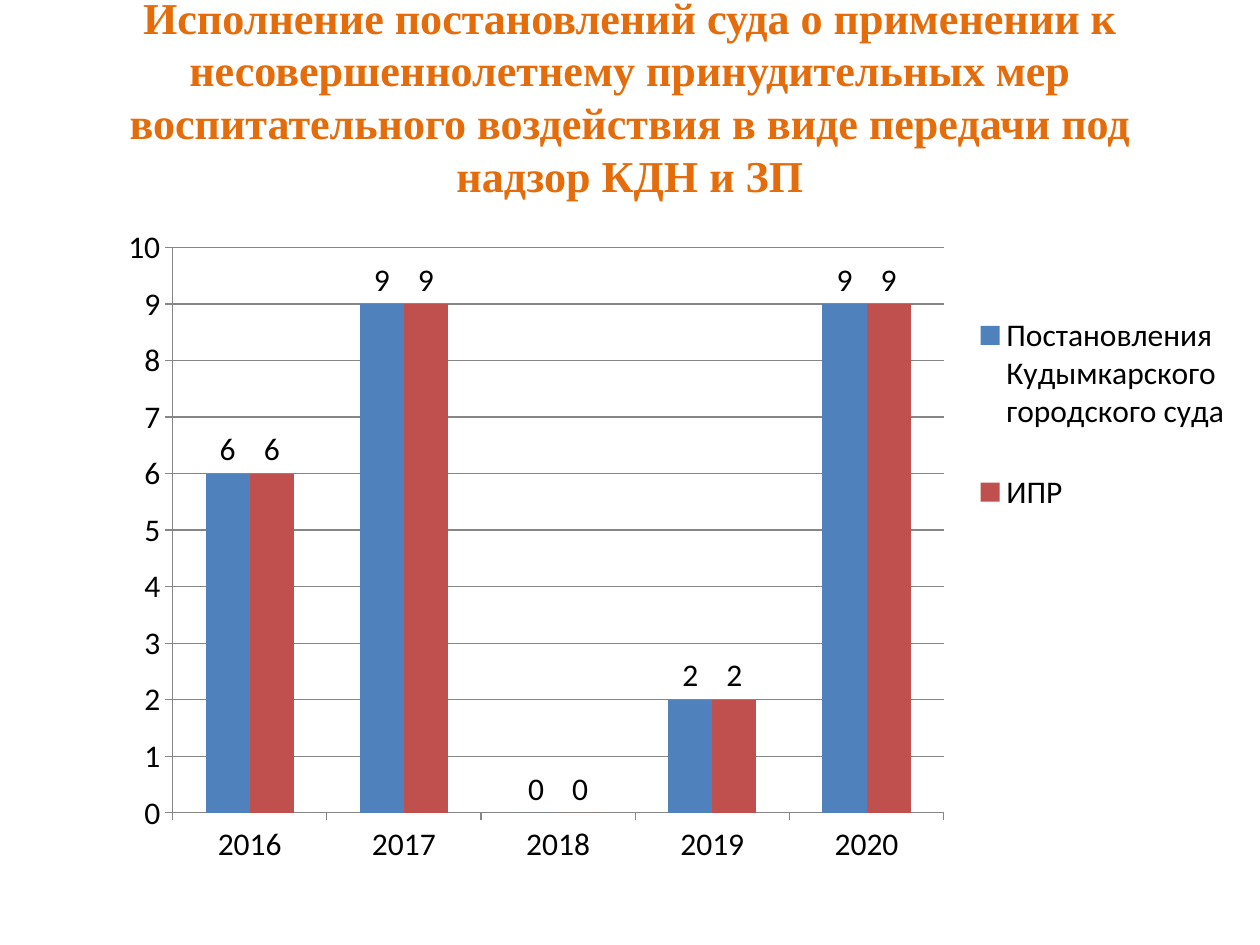
from lxml.etree import SubElement
from pptx import Presentation
from pptx.chart.data import CategoryChartData
from pptx.dml.color import RGBColor
from pptx.enum.chart import XL_CHART_TYPE, XL_LABEL_POSITION, XL_LEGEND_POSITION, XL_TICK_MARK
from pptx.enum.text import MSO_ANCHOR, PP_ALIGN
from pptx.oxml.ns import qn
from pptx.util import Inches, Pt

TITLE = (
    "Исполнение постановлений суда о применении к несовершеннолетнему "
    "принудительных мер воспитательного воздействия в виде передачи "
    "под надзор КДН и ЗП"
)
YEARS = ["2016", "2017", "2018", "2019", "2020"]
SERIES = [
    ("Постановления Кудымкарского городского суда", [6, 9, 0, 2, 9], "4F81BD"),
    ("ИПР", [6, 9, 0, 2, 9], "C0504D"),
]
GRID_COLOR = "868686"


def rgb(value):
    """Turn a hex string into a colour."""
    return RGBColor.from_string(value)


def set_layout(element, x, y, width, height, inner=False):
    """Fix a chart part at fractions of the chart area."""
    layout = element.find(qn("c:layout"))
    if layout is None:
        layout = SubElement(element, qn("c:layout"))
        anchor = element.find(qn("c:legendPos"))
        if anchor is None:
            element.insert(0, layout)
        else:
            anchor.addnext(layout)
    manual = SubElement(layout, qn("c:manualLayout"))
    settings = [("layoutTarget", "inner")] if inner else []
    settings += [("xMode", "edge"), ("yMode", "edge")]
    settings += [("x", x), ("y", y), ("w", width), ("h", height)]
    for tag, value in settings:
        SubElement(manual, qn(f"c:{tag}")).set("val", str(value))


def add_title(slide, left, top, width, height):
    """Place the centred heading."""
    heading = slide.shapes.add_textbox(left, top, width, height).text_frame
    heading.word_wrap = True
    heading.vertical_anchor = MSO_ANCHOR.MIDDLE
    paragraph = heading.paragraphs[0]
    paragraph.text = TITLE
    paragraph.alignment = PP_ALIGN.CENTER
    paragraph.font.name = "Times New Roman"
    paragraph.font.size = Pt(25.2)
    paragraph.font.bold = True
    paragraph.font.color.rgb = rgb("E46C0A")


def style_axes(chart):
    """Set the scale, ticks and grey lines of both axes."""
    value_axis = chart.value_axis
    value_axis.minimum_scale, value_axis.maximum_scale = 0, 10
    value_axis.major_unit = 1
    value_axis.has_major_gridlines = True
    value_axis.major_gridlines.format.line.color.rgb = rgb(GRID_COLOR)
    for axis in (chart.category_axis, value_axis):
        axis.major_tick_mark = XL_TICK_MARK.OUTSIDE
        axis.minor_tick_mark = XL_TICK_MARK.NONE
        axis.format.line.color.rgb = rgb(GRID_COLOR)


def style_columns(plot):
    """Colour the columns and show their values."""
    plot.gap_width = 150
    plot.overlap = 0
    plot.vary_by_categories = False
    for series, (_, _, color) in zip(plot.series, SERIES):
        series.format.fill.solid()
        series.format.fill.fore_color.rgb = rgb(color)
        series.data_labels.show_value = True
        series.data_labels.position = XL_LABEL_POSITION.OUTSIDE_END


def add_rulings_chart(slide, left, top, width, height):
    """Place the chart of court rulings by year."""
    data = CategoryChartData()
    data.categories = YEARS
    for name, values, _ in SERIES:
        data.add_series(name, values)
    chart = slide.shapes.add_chart(
        XL_CHART_TYPE.COLUMN_CLUSTERED, left, top, width, height, data
    ).chart
    chart.has_title = False
    chart.font.name = "Calibri"
    chart.font.size = Pt(18)
    chart.font.color.rgb = rgb("000000")
    style_axes(chart)
    style_columns(chart.plots[0])
    chart.has_legend = True
    chart.legend.position = XL_LEGEND_POSITION.RIGHT
    chart.legend.include_in_layout = False
    plot_area = next(chart.element.iter(qn("c:plotArea")))
    legend = next(chart.element.iter(qn("c:legend")))
    set_layout(plot_area, 0.06, 0.05, 0.68, 0.85, inner=True)
    set_layout(legend, 0.76, 0.09, 0.24, 0.42)


def main():
    """Build and save the slide."""
    deck = Presentation()
    deck.slide_width, deck.slide_height = Inches(10), Inches(7.5)
    slide = deck.slides.add_slide(deck.slide_layouts[6])
    add_title(slide, Inches(0.5), Inches(-0.03), Inches(9), Inches(1.58))
    add_rulings_chart(slide, Inches(0.83), Inches(1.7), Inches(9), Inches(5.28))
    deck.save("out.pptx")


if __name__ == "__main__":
    main()
